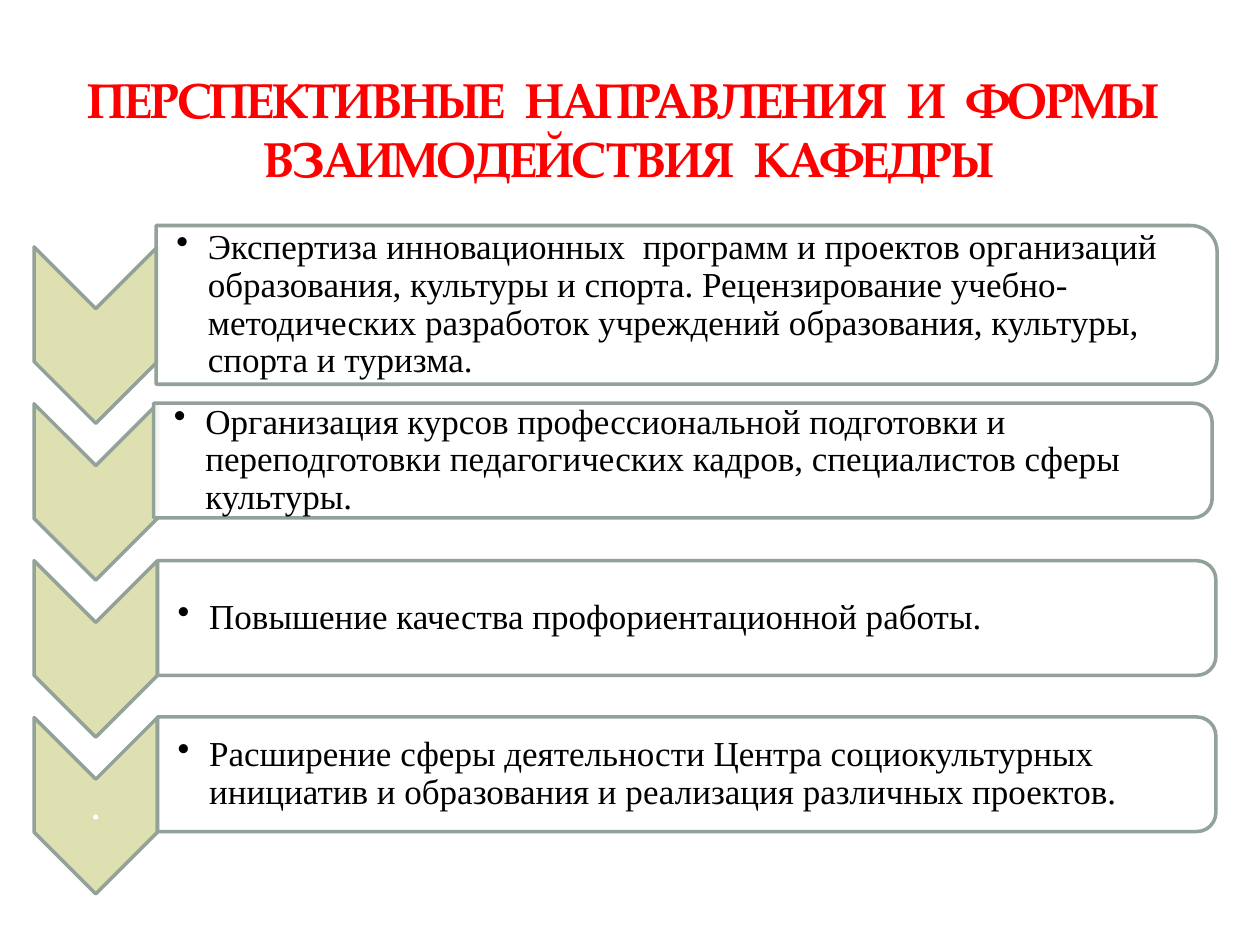
from dataclasses import dataclass

import pptx
import pptx.dml.color
import pptx.enum.shapes
import pptx.enum.text
import pptx.oxml
import pptx.oxml.ns
import pptx.util
from pptx.util import Inches

COLORS = {
    "title": "FF0000",
    "chevron": "DFE0B1",
    "outline": "93A299",
    "panel": "FFFFFF",
    "text": "000000",
    "dot": "FFFFFF",
}
TITLE_FONT = "TeX Gyre Pagella"
BODY_FONT = "Times New Roman"
FIRST_CHEVRON_TOP = 1.96
ROW_PITCH = 1.245
CHEVRON_LEFT = 0.27
CHEVRON_WIDTH = 0.98
CHEVRON_HEIGHT = 1.4


@dataclass(frozen=True)
class Box:
    left: float
    top: float
    width: float
    height: float


@dataclass(frozen=True)
class Direction:
    text: str
    panel: Box
    text_inset: float = 0.04


DIRECTIONS = [
    Direction(
        "Экспертиза инновационных  программ и проектов организаций образования, "
        "культуры и спорта. Рецензирование учебно-методических разработок "
        "учреждений образования, культуры, спорта и туризма.",
        Box(1.24, 1.79, 8.42, 1.26),
        0.06,
    ),
    Direction(
        "Организация курсов профессиональной подготовки и переподготовки "
        "педагогических кадров, специалистов сферы культуры.",
        Box(1.22, 3.2, 8.4, 0.91),
    ),
    Direction(
        "Повышение качества профориентационной работы.",
        Box(1.25, 4.45, 8.4, 0.91),
    ),
    Direction(
        "Расширение сферы деятельности Центра социокультурных инициатив "
        "и образования и реализация различных проектов.",
        Box(1.25, 5.69, 8.4, 0.91),
    ),
]


def rgb(name: str) -> pptx.dml.color.RGBColor:
    return pptx.dml.color.RGBColor.from_string(COLORS[name])


def add_turned_shape(slide, kind, box: Box, fill: str):
    left = box.left + (box.width - box.height) / 2
    top = box.top + (box.height - box.width) / 2
    shape = slide.shapes.add_shape(
        kind, Inches(left), Inches(top), Inches(box.height), Inches(box.width)
    )
    shape.rotation = 90
    shape.shadow.inherit = False
    shape.fill.solid()
    shape.fill.fore_color.rgb = rgb(fill)
    shape.line.color.rgb = rgb("outline")
    shape.line.width = pptx.util.Pt(2)
    return shape


def set_opacity(shape, percent: int) -> None:
    color = shape._element.spPr.find(
        f"{pptx.oxml.ns.qn('a:solidFill')}/{pptx.oxml.ns.qn('a:srgbClr')}"
    )
    alpha = pptx.oxml.parse_xml(
        f'<a:alpha {pptx.oxml.ns.nsdecls("a")} val="{percent * 1000}"/>'
    )
    color.append(alpha)


def add_text(slide, box: Box, text: str, font: str, size: int, color: str,
             insets: tuple[float, float, float, float], line_spacing: float = 1.0):
    shape = slide.shapes.add_textbox(
        Inches(box.left), Inches(box.top), Inches(box.width), Inches(box.height)
    )
    frame = shape.text_frame
    frame.word_wrap = True
    frame.vertical_anchor = pptx.enum.text.MSO_ANCHOR.MIDDLE
    frame.margin_left, frame.margin_top, frame.margin_right, frame.margin_bottom = (
        Inches(inset) for inset in insets
    )
    paragraph = frame.paragraphs[0]
    paragraph.line_spacing = line_spacing
    run = paragraph.add_run()
    run.text = text
    run.font.name = font
    run.font.size = pptx.util.Pt(size)
    run.font.color.rgb = rgb(color)
    return paragraph


def add_bullet(paragraph) -> None:
    properties = paragraph._p.get_or_add_pPr()
    properties.set("marL", str(Inches(0.25)))
    properties.set("indent", str(Inches(-0.25)))
    properties.append(pptx.oxml.parse_xml(
        f'<a:buChar {pptx.oxml.ns.nsdecls("a")} char="•"/>'
    ))


def add_title(slide) -> None:
    paragraph = add_text(
        slide, Box(0.47, 0.45, 9.03, 1.14),
        "ПЕРСПЕКТИВНЫЕ  НАПРАВЛЕНИЯ  И  ФОРМЫ  ВЗАИМОДЕЙСТВИЯ  КАФЕДРЫ",
        TITLE_FONT, 28, "title", (0.1, 0.05, 0.1, 0.05),
    )
    paragraph.alignment = pptx.enum.text.PP_ALIGN.CENTER
    run = paragraph.runs[0]
    run.font.bold = True
    run._r.get_or_add_rPr().set("spc", "-60")


def add_direction(slide, index: int, direction: Direction) -> None:
    shapes = pptx.enum.shapes.MSO_SHAPE
    chevron = Box(CHEVRON_LEFT, FIRST_CHEVRON_TOP + index * ROW_PITCH,
                  CHEVRON_WIDTH, CHEVRON_HEIGHT)
    add_turned_shape(slide, shapes.CHEVRON, chevron, "chevron")
    panel = direction.panel
    panel_shape = add_turned_shape(
        slide, shapes.ROUND_2_SAME_RECTANGLE, panel, "panel"
    )
    set_opacity(panel_shape, 90)
    inset = direction.text_inset
    text_box = Box(panel.left, panel.top + inset,
                   panel.width - 0.05, panel.height - 2 * inset)
    paragraph = add_text(slide, text_box, direction.text, BODY_FONT, 20, "text",
                         (0.16, 0.01, 0.01, 0.01), 0.9)
    add_bullet(paragraph)


def main() -> None:
    presentation = pptx.Presentation()
    presentation.slide_width = Inches(10)
    presentation.slide_height = Inches(7.5)
    slide = presentation.slides.add_slide(presentation.slide_layouts[6])
    add_title(slide)
    for index, direction in enumerate(DIRECTIONS):
        add_direction(slide, index, direction)
    dot = add_text(slide, Box(CHEVRON_LEFT, 6.18, CHEVRON_WIDTH, 0.42), ".",
                   BODY_FONT, 25, "dot", (0.02, 0.02, 0.02, 0.02), 0.9)
    dot.alignment = pptx.enum.text.PP_ALIGN.CENTER
    presentation.save("out.pptx")


if __name__ == "__main__":
    main()
